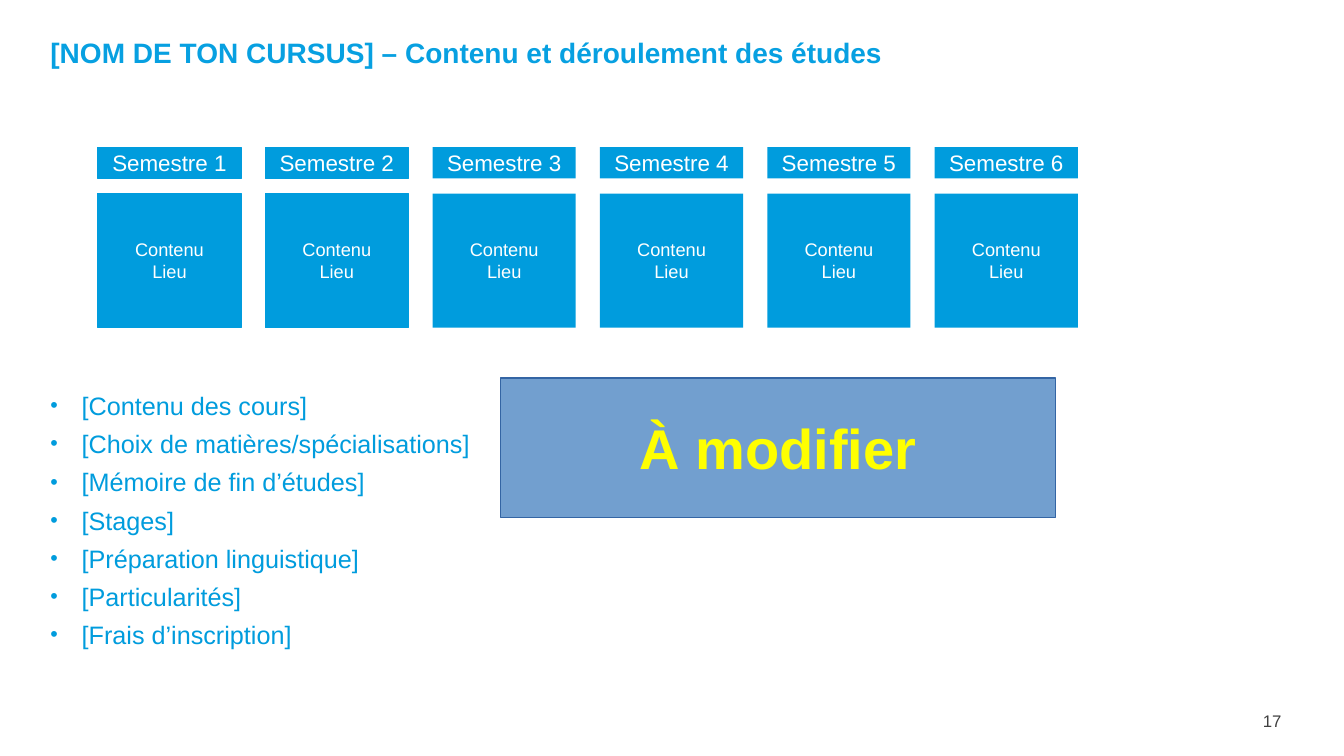
from lxml import etree
from pptx import Presentation
from pptx.dml.color import RGBColor
from pptx.enum.shapes import MSO_SHAPE
from pptx.enum.text import MSO_ANCHOR, MSO_AUTO_SIZE, PP_ALIGN
from pptx.oxml.ns import qn
from pptx.util import Inches, Pt

RECTANGLE = MSO_SHAPE.RECTANGLE
TOP, MIDDLE = MSO_ANCHOR.TOP, MSO_ANCHOR.MIDDLE
LEFT, CENTER, RIGHT = PP_ALIGN.LEFT, PP_ALIGN.CENTER, PP_ALIGN.RIGHT
NO_AUTOFIT = MSO_AUTO_SIZE.NONE

TITLE = "[NOM DE TON CURSUS] – Contenu et déroulement des études"
SEMESTERS = [f"Semestre {number}" for number in range(1, 7)]
SEMESTER_DETAILS = ["Contenu", "Lieu"]
TOPICS = [
    "[Contenu des cours]",
    "[Choix de matières/spécialisations]",
    "[Mémoire de fin d’études]",
    "[Stages]",
    "[Préparation linguistique]",
    "[Particularités]",
    "[Frais d’inscription]",
]
NOTICE = "À modifier"
PAGE_NUMBER = "17"

THEME = {
    "font": "Arial",
    "blue": "009CDD",
    "notice_fill": "729FCF",
    "notice_line": "3465A4",
    "title": {"size": 20, "color": "07A0E1", "bold": True},
    "topic": {"size": 18, "color": "009CDD", "bold": False},
    "semester": {"size": 16, "color": "FFFFFF", "bold": False},
    "detail": {"size": 13, "color": "FFFFFF", "bold": False},
    "notice": {"size": 40, "color": "FFFF00", "bold": True},
    "page": {"size": 12, "color": "404040", "bold": False},
}

FIRST_LEFT, SEMESTER_PITCH, SEMESTER_WIDTH = 0.97, 1.66, 1.42
SEMESTER_ROWS = {"semester": (1.46, 0.31), "detail": (1.92, 1.33)}
OUTLINED_SEMESTERS = 2
TOPIC_INDENT = Inches(0.31)


def place(part, left, top, width, height):
    frame = {"left": left, "top": top, "width": width, "height": height}
    for side, length in frame.items():
        setattr(part, side, Inches(length))


def write(part, lines, style, align=LEFT, anchor=MIDDLE, inset=0.1, **spacing):
    text = part.text_frame
    frame_format = {
        "auto_size": NO_AUTOFIT,
        "word_wrap": True,
        "vertical_anchor": anchor,
        "margin_left": Inches(inset),
        "margin_right": Inches(inset),
        "margin_top": Inches(0.05),
        "margin_bottom": Inches(0.05),
    }
    for name, value in frame_format.items():
        setattr(text, name, value)
    look = THEME[style]
    font_format = {"name": THEME["font"], "size": Pt(look["size"]), "bold": look["bold"]}
    for index, line in enumerate(lines):
        paragraph = text.add_paragraph() if index else text.paragraphs[0]
        paragraph_format = {"alignment": align, "space_before": Pt(0), **spacing}
        if index == 0:
            paragraph_format["space_before"] = Pt(0)
        for name, value in paragraph_format.items():
            setattr(paragraph, name, value)
        run = paragraph.add_run()
        run.text = line
        for name, value in font_format.items():
            setattr(run.font, name, value)
        run.font.color.rgb = RGBColor.from_string(look["color"])


def add_box(shapes, frame, fill, line=None, line_width=0):
    box = shapes.add_shape(RECTANGLE, *map(Inches, frame))
    box.shadow.inherit = False
    box.fill.solid()
    box.fill.fore_color.rgb = RGBColor.from_string(fill)
    if line:
        box.line.color.rgb = RGBColor.from_string(line)
        box.line.width = Pt(line_width)
    else:
        box.line.fill.background()
    return box


def add_bullet(paragraph):
    properties = paragraph._p.get_or_add_pPr()
    properties.set("marL", str(TOPIC_INDENT))
    properties.set("indent", str(-TOPIC_INDENT))
    bullet_color = etree.SubElement(properties, qn("a:buClr"))
    etree.SubElement(bullet_color, qn("a:srgbClr"), val=THEME["blue"])
    etree.SubElement(properties, qn("a:buSzPct"), val="85000")
    etree.SubElement(properties, qn("a:buFont"), typeface=THEME["font"])
    etree.SubElement(properties, qn("a:buChar"), char="•")


def add_semester(slide, index, semester):
    group = slide.shapes.add_group_shape()
    left = FIRST_LEFT + index * SEMESTER_PITCH
    outline = THEME["blue"] if index < OUTLINED_SEMESTERS else None
    row_lines = {"semester": [semester], "detail": SEMESTER_DETAILS}
    for style, (top, height) in SEMESTER_ROWS.items():
        frame = (left, top, SEMESTER_WIDTH, height)
        box = add_box(group.shapes, frame, THEME["blue"], outline, 0.5)
        write(box, row_lines[style], style, CENTER)


def main():
    deck = Presentation()
    deck.slide_width, deck.slide_height = Inches(13.33), Inches(7.5)
    slide = deck.slides.add_slide(deck.slide_layouts[1])

    title, topics = slide.placeholders
    place(title, 0.5, 0.37, 9.5, 0.37)
    write(title, [TITLE], "title", anchor=TOP, inset=0, line_spacing=0.8)

    place(topics, 0.5, 3.88, 12.33, 2.67)
    write(topics, TOPICS, "topic", anchor=TOP, inset=0,
          line_spacing=0.8, space_before=Pt(10))
    for paragraph in topics.text_frame.paragraphs:
        add_bullet(paragraph)

    for index, semester in enumerate(SEMESTERS):
        add_semester(slide, index, semester)

    notice = add_box(slide.shapes, (4.96, 3.75, 5.51, 1.38),
                     THEME["notice_fill"], THEME["notice_line"])
    write(notice, [NOTICE], "notice", CENTER)

    page = slide.shapes.add_textbox(*map(Inches, (9.81, 6.95, 3, 0.4)))
    write(page, [PAGE_NUMBER], "page", RIGHT)

    deck.save("out.pptx")


if __name__ == "__main__":
    main()
